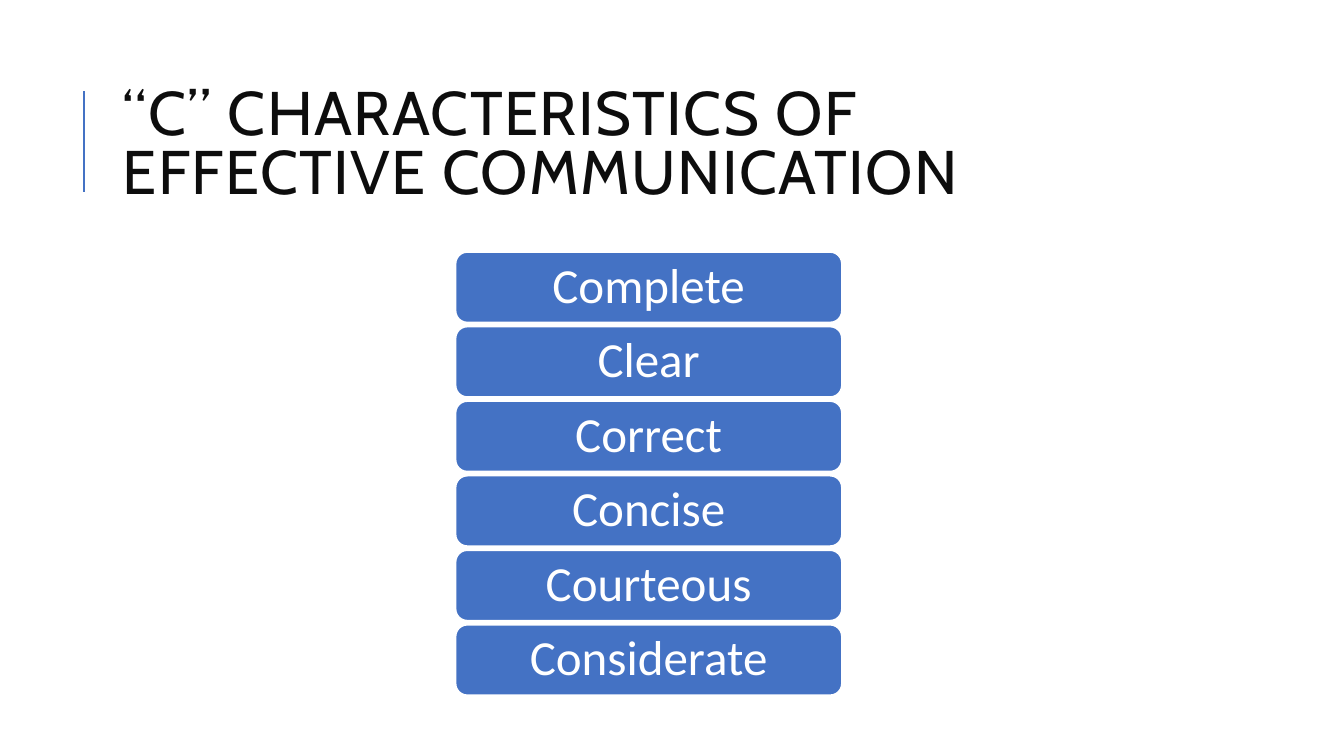
from dataclasses import dataclass

from lxml.etree import SubElement
from pptx import Presentation
from pptx.dml.color import RGBColor as RGB
from pptx.enum.shapes import MSO_CONNECTOR as CONNECTOR, MSO_SHAPE as SHAPE
from pptx.enum.text import MSO_ANCHOR as ANCHOR, MSO_AUTO_SIZE as AUTO, PP_ALIGN as ALIGN
from pptx.oxml.ns import qn
from pptx.util import Pt

TITLE = ["“C” CHARACTERISTICS OF ", "EFFECTIVE COMMUNICATION"]
QUALITIES = ["Complete", "Clear", "Correct", "Concise", "Courteous", "Considerate"]


@dataclass(frozen=True)
class Theme:
    accent: RGB = RGB(0x44, 0x72, 0xC4)
    ink: RGB = RGB(0x0D, 0x0D, 0x0D)
    white: RGB = RGB(0xFF, 0xFF, 0xFF)
    title_font: str = "Cabin"
    body_font: str = "Calibri"
    title_size: int = 44
    body_size: int = 35


T = Theme()
BOX_LEFT, BOX_TOP, BOX_W, BOX_H, BOX_PITCH = 325.4, 180, 276, 50.4, 53.25


def add_run(p, text, font, size, color):
    r = p.add_run()
    r.text = text
    r.font.name = font
    r.font.size = Pt(size)
    r.font.color.rgb = color
    return r


def add_rule(s):
    rule = s.shapes.add_connector(CONNECTOR.STRAIGHT, Pt(60), Pt(136.8), Pt(60), Pt(64.8))
    rule.line.color.rgb = T.accent
    rule.line.width = Pt(1.5)
    SubElement(rule._element.spPr, qn("a:effectLst"))


def add_title(s):
    sp = s.shapes.title
    sp.left, sp.top, sp.width, sp.height = Pt(80.6), Pt(46), Pt(765.4), Pt(118)
    tf = sp.text_frame
    tf.auto_size = AUTO.NONE
    tf.vertical_anchor = ANCHOR.MIDDLE
    p = tf.paragraphs[0]
    p.alignment = ALIGN.LEFT
    p.line_spacing = 0.8
    for i, line in enumerate(TITLE):
        if i:
            p.add_line_break()
        r = add_run(p, line, T.title_font, T.title_size, T.ink)
        r.font._element.set("spc", "100")


def add_quality(s, i, name):
    sp = s.shapes.add_shape(SHAPE.ROUNDED_RECTANGLE, Pt(BOX_LEFT), Pt(BOX_TOP + i * BOX_PITCH),
                            Pt(BOX_W), Pt(BOX_H))
    sp.shadow.inherit = False
    sp.fill.solid()
    sp.fill.fore_color.rgb = T.accent
    sp.line.color.rgb = T.white
    sp.line.width = Pt(1.25)
    tf = sp.text_frame
    tf.word_wrap = True
    tf.vertical_anchor = ANCHOR.MIDDLE
    tf.margin_left = tf.margin_right = Pt(10.5)
    tf.margin_top = tf.margin_bottom = Pt(5.25)
    p = tf.paragraphs[0]
    p.alignment = ALIGN.CENTER
    p.line_spacing = 0.9
    add_run(p, name, T.body_font, T.body_size, T.white)


def main():
    prs = Presentation()
    prs.slide_width, prs.slide_height = Pt(960), Pt(540)
    s = prs.slides.add_slide(prs.slide_layouts.get_by_name("Title Only"))
    add_rule(s)
    add_title(s)
    for i, name in enumerate(QUALITIES):
        add_quality(s, i, name)
    prs.save("out.pptx")


if __name__ == "__main__":
    main()
